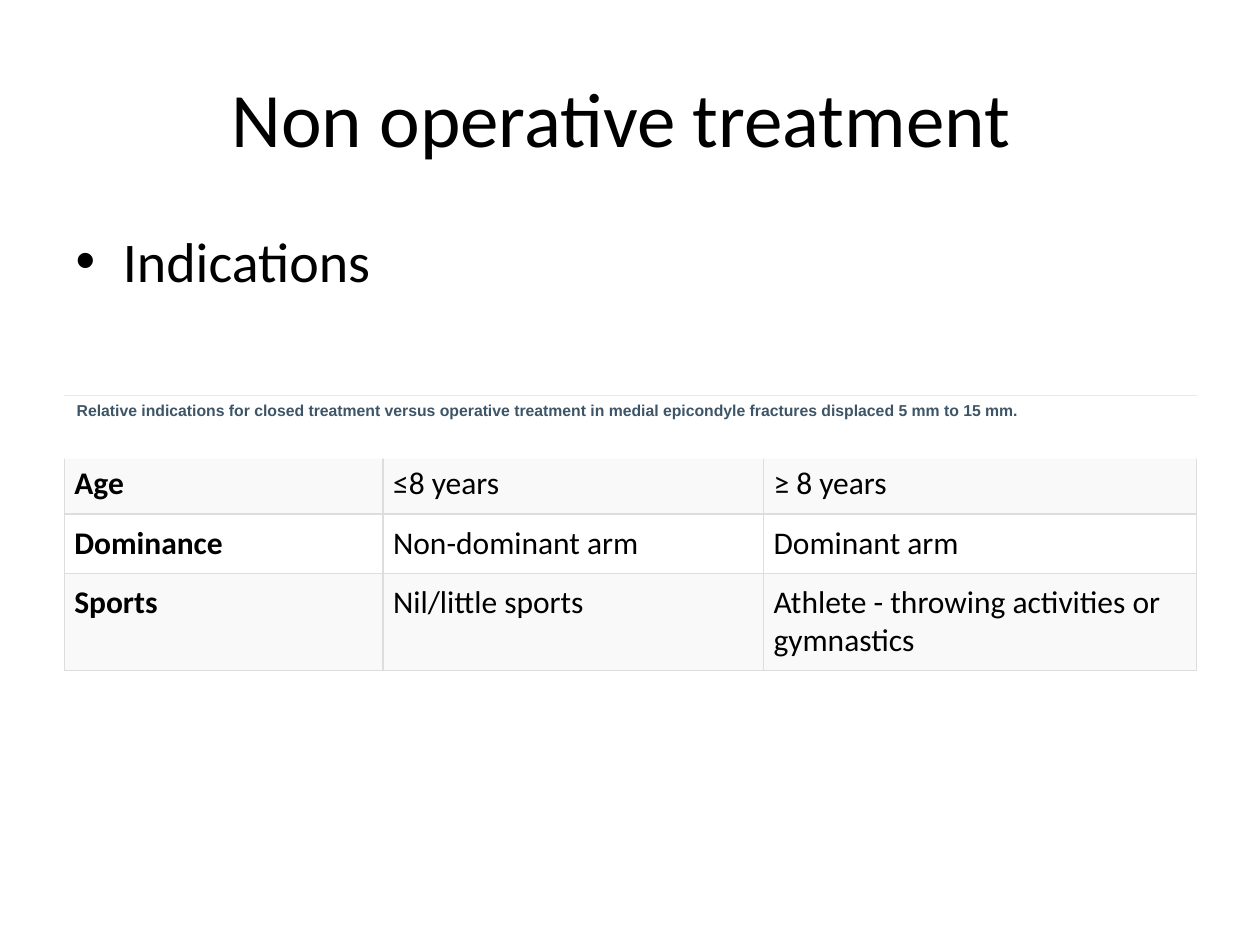
from pptx import Presentation
from pptx import util as u
from pptx.dml.color import RGBColor
from pptx.enum import shapes, text
from pptx.oxml.ns import qn
from lxml import etree

W, H = 10, 7.5
LEFT, TOP = 0.51, 3.14
COLS = [2.53, 3.02, 3.44]
ROWS = [0.47, 0.47, 0.47, 0.77]
CRITERIA = [
    ("Age", "≤8 years", "≥ 8 years"),
    ("Dominance", "Non-dominant arm", "Dominant arm"),
    ("Sports", "Nil/little sports", "Athlete - throwing activities or gymnastics"),
]


def color(hex_string):
    return RGBColor.from_string(hex_string)


def place(sp, left, top, width, height):
    sp.left, sp.top = u.Inches(left), u.Inches(top)
    sp.width, sp.height = u.Inches(width), u.Inches(height)


def style(tf, size, font="Calibri", ink="000000", bold=False):
    for p in tf.paragraphs:
        for r in p.runs:
            r.font.size, r.font.name, r.font.bold = u.Pt(size), font, bold
            r.font.color.rgb = color(ink)


def fill_placeholder(sp, words, box, size):
    place(sp, *box)
    sp.text_frame.text = words
    style(sp.text_frame, size)


def set_borders(cell, ink="DDDDDD", width=0.75):
    tc_pr = cell._tc.get_or_add_tcPr()
    for i, side in enumerate(("lnL", "lnR", "lnT", "lnB")):
        ln = etree.Element(qn("a:" + side), w=str(u.Pt(width)))
        fill = etree.SubElement(ln, qn("a:solidFill"))
        etree.SubElement(fill, qn("a:srgbClr"), val=ink)
        tc_pr.insert(i, ln)  # borders come before the fill


def format_cell(cell, words, shaded, bold):
    cell.margin_left = cell.margin_right = u.Inches(0.08)
    cell.margin_top = cell.margin_bottom = u.Inches(0.08)
    cell.text_frame.text = words
    style(cell.text_frame, 18, bold=bold)
    if shaded:
        cell.fill.solid()
        cell.fill.fore_color.rgb = color("F9F9F9")
    else:
        cell.fill.background()
    set_borders(cell)


def add_criteria_table(s):
    frame = s.shapes.add_table(len(ROWS), len(COLS), u.Inches(LEFT), u.Inches(TOP),
                               u.Inches(sum(COLS)), u.Inches(sum(ROWS)))
    table = frame.table
    table.first_row = table.horz_banding = False
    for column, width in zip(table.columns, COLS):
        column.width = u.Inches(width)
    for row, height in zip(table.rows, ROWS):
        row.height = u.Inches(height)
    # The first row is the space behind the caption
    for i, row in enumerate([("",) * len(COLS)] + CRITERIA):
        for j, words in enumerate(row):
            format_cell(table.cell(i, j), words, shaded=i % 2 == 1, bold=j == 0)


def add_caption(s, words):
    sp = s.shapes.add_shape(shapes.MSO_SHAPE.RECTANGLE, 0, 0, 0, 0)
    place(sp, LEFT, TOP, W - LEFT, 0.5)
    sp.shadow.inherit = False
    sp.fill.solid()
    sp.fill.fore_color.rgb = color("FFFFFF")
    sp.line.fill.background()
    tf = sp.text_frame
    tf.word_wrap = False
    tf.vertical_anchor = text.MSO_ANCHOR.TOP
    tf.margin_top = u.Inches(0.04)
    tf.text = words
    tf.paragraphs[0].alignment = text.PP_ALIGN.LEFT
    style(tf, 9, "Arial", "3D5567", bold=True)


def main():
    prs = Presentation()
    prs.slide_width, prs.slide_height = u.Inches(W), u.Inches(H)
    s = prs.slides.add_slide(prs.slide_layouts[1])

    # Title and list
    fill_placeholder(s.shapes.title, "Non operative treatment ",
                     (0.5, 0.3, 9, 1.25), 44)
    fill_placeholder(s.placeholders[1], "Indications", (0.5, 1.75, 9, 4.95), 32)

    # Table with its caption on top
    add_criteria_table(s)
    add_caption(s, "Relative indications for closed treatment versus operative treatment "
                   "in medial epicondyle fractures displaced 5 mm to 15 mm.")

    prs.save("out.pptx")


if __name__ == "__main__":
    main()
